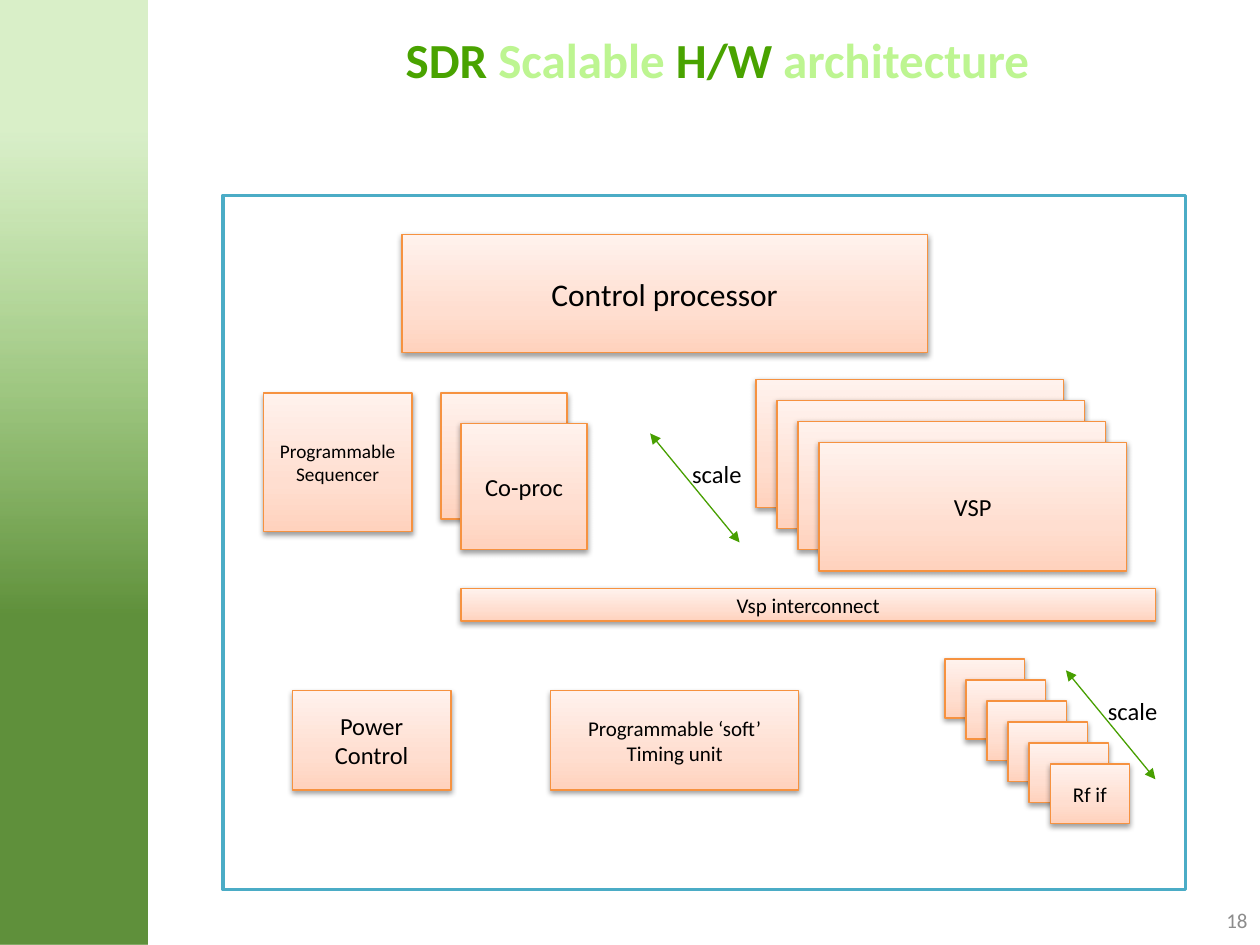
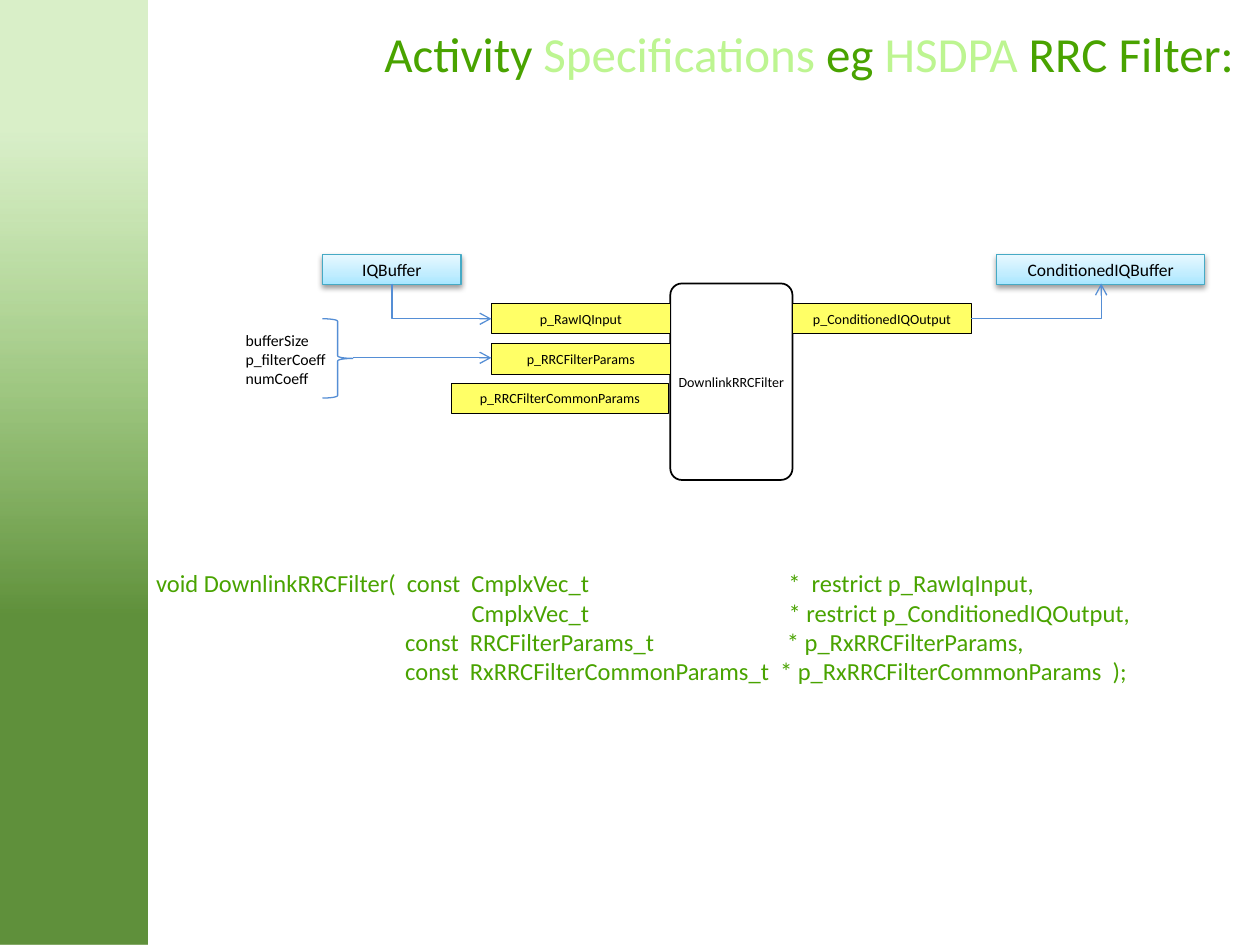
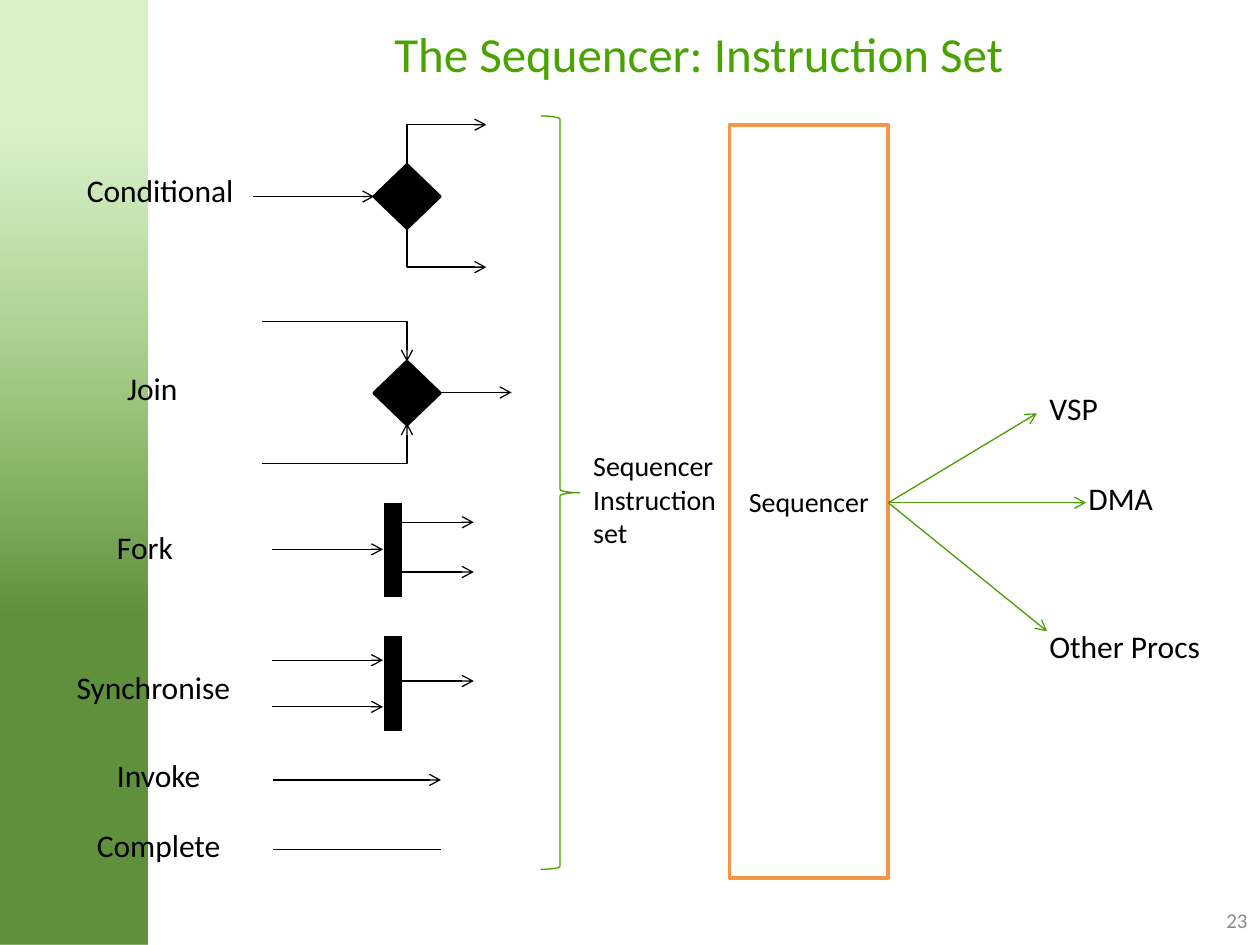
from dataclasses import dataclass

from lxml import etree
from pptx import Presentation
from pptx import util as u
from pptx.dml.color import RGBColor
from pptx.enum import shapes, text
from pptx.oxml import parse_xml
from pptx.oxml.ns import nsdecls, qn

SHAPE = shapes.MSO_SHAPE
ALIGN = text.PP_ALIGN
ANCHOR = text.MSO_ANCHOR


@dataclass(frozen=True)
class Look:
    """Fill, outline and shadow of a kind of box; a tuple fill is a gradient."""
    fill: object = None
    line: str = None
    weight: float = 0.75
    shadow: bool = False


class Theme:
    font = "Calibri"
    black, grey = "000000", "8C8C8C"
    green, pale, arrow = "49A300", "BDF591", "479F00"
    blue = "558ED5"
    title, label, mid, code, note, small, param, port = 28, 18, 16, 14, 12, 11, 9, 8
    # Gradient stops: position, colour, opacity in percent, from the bottom up
    band = Look(((35, "5C8E37", 97), (86, "82CA4E", 30)))
    unit = Look(((0, "FFD2BD", 100), (35, "FFDED0", 100), (100, "FFF2ED", 100)),
                "F69240", shadow=True)
    buffer = Look(((0, "A7E6FF", 100), (35, "C1EDFF", 100), (100, "E7F8FF", 100)),
                  "46AAC5", shadow=True)
    chip = Look("FFFFFF", "4BACC6", 2)
    sequencer = Look("FFFFFF", "F79646", 2)
    pin = Look("FFFF66", black, 0.5)
    activity = Look(None, black, 1)
    node = Look(black, black, 2)


def write(tf, content, size, color=Theme.black, align=ALIGN.LEFT,
          anchor=ANCHOR.TOP, wrap=True, inset=None, bold=None):
    """Fill a frame: lines of a string, or one line of (text, colour) runs."""
    tf.word_wrap, tf.vertical_anchor = wrap, anchor
    tf.auto_size = text.MSO_AUTO_SIZE.NONE
    if inset is not None:
        tf.margin_left = tf.margin_top = tf.margin_right = tf.margin_bottom = inset
    if isinstance(content, str):
        lines = [[(line, color)] for line in content.split("\n")]
    else:
        lines = [content]
    for i, line in enumerate(lines):
        p = tf.add_paragraph() if i else tf.paragraphs[0]
        p.alignment = align
        for words, rgb in line:
            r = p.add_run()
            r.text = words
            r.font.name, r.font.size, r.font.bold = Theme.font, u.Pt(size), bold
            r.font.color.rgb = RGBColor.from_string(rgb)


class Deck:
    """Holds the style and the current slide; the grid has 100 columns, 75 rows."""

    def __init__(self, theme):
        self.t = theme
        self.prs = Presentation()
        self.prs.slide_width, self.prs.slide_height = u.Inches(10), u.Inches(7.5)
        self.col = self.prs.slide_width / 100
        self.row = self.prs.slide_height / 75
        self.s = None

    def place(self, x, y, w, h):
        return [round(n * cell) for n, cell in
                zip((x, y, w, h), (self.col, self.row) * 2)]

    def slide(self, title, x, h=8.4, number=None, bold=None):
        first = self.s is None
        self.s = self.prs.slides.add_slide(self.prs.slide_layouts[5])
        if first:
            self.side_band()
        sp = self.s.shapes.title
        sp.left, sp.top, sp.width, sp.height = self.place(x, 0, 100 - x, h)
        write(sp.text_frame, title, self.t.title, self.t.green,
              anchor=ANCHOR.MIDDLE, bold=bold)
        if number:
            self.label(number, 94.1, 71, 5.9, 4, size=self.t.note, color=self.t.grey,
                       align=ALIGN.RIGHT, anchor=ANCHOR.MIDDLE, wrap=True)

    def side_band(self):
        """Draw the green band once and move it to the slide master."""
        sp = self.box("", 0, 0, 11.7, 75, self.t.band)
        self.prs.slide_master.shapes.element.insert(2, sp.element)

    def box(self, words, x, y, w, h, look, size=14, shape=SHAPE.RECTANGLE, inset=None):
        sp = self.s.shapes.add_shape(shape, *self.place(x, y, w, h))
        sp.shadow.inherit = False
        self.paint(sp, look)
        if words:
            write(sp.text_frame, words, size, align=ALIGN.CENTER,
                  anchor=ANCHOR.MIDDLE, inset=inset)
        return sp

    def paint(self, sp, look):
        spPr = sp.element.spPr
        if look.fill is None:
            sp.fill.background()
        else:
            sp.fill.solid()
            if isinstance(look.fill, str):
                sp.fill.fore_color.rgb = RGBColor.from_string(look.fill)
            else:
                stops = "".join(
                    f'<a:gs pos="{pos * 1000}"><a:srgbClr val="{rgb}">'
                    f'<a:alpha val="{alpha * 1000}"/></a:srgbClr></a:gs>'
                    for pos, rgb, alpha in look.fill)
                spPr.replace(spPr.find(qn("a:solidFill")), parse_xml(
                    f'<a:gradFill {nsdecls("a")} rotWithShape="1"><a:gsLst>{stops}'
                    '</a:gsLst><a:lin ang="16200000" scaled="0"/></a:gradFill>'))
        if look.line:
            sp.line.color.rgb = RGBColor.from_string(look.line)
            sp.line.width = u.Pt(look.weight)
        else:
            sp.line.fill.background()
        if look.shadow:
            spPr.find(qn("a:effectLst")).append(parse_xml(
                f'<a:outerShdw {nsdecls("a")} blurRad="40000" dist="20000" '
                'dir="5400000" rotWithShape="0"><a:srgbClr val="000000">'
                '<a:alpha val="38000"/></a:srgbClr></a:outerShdw>'))

    def stack(self, words, count, x, y, w, h, dx=1.67, dy=1.67, size=14):
        """Overlapping units; only the front one is named."""
        for i in range(count):
            front = i == count - 1
            self.box(words if front else "", x + i * dx, y + i * dy, w, h,
                     self.t.unit, size)

    def label(self, words, x, y, w, h, size=18, wrap=False, **style):
        sp = self.s.shapes.add_textbox(*self.place(x, y, w, h))
        write(sp.text_frame, words, size, wrap=wrap, **style)

    def brace(self, x, y, w, h, color):
        self.box("", x, y, w, h, Look(None, color), shape=SHAPE.RIGHT_BRACE)

    def line(self, x1, y1, x2, y2, color=Theme.black, weight=0.75, head=None, tail=None):
        c = self.s.shapes.add_connector(shapes.MSO_CONNECTOR.STRAIGHT,
                                        *self.place(x1, y1, x2, y2))
        c.line.color.rgb = RGBColor.from_string(color)
        c.line.width = u.Pt(weight)
        ln = c.line._get_or_add_ln()
        for tag, kind in (("a:headEnd", head), ("a:tailEnd", tail)):
            if kind:
                etree.SubElement(ln, qn(tag)).set("type", kind)
        etree.SubElement(c.element.spPr, qn("a:effectLst"))
        return c

    def arrow(self, x1, y1, x2, y2, color=Theme.black):
        return self.line(x1, y1, x2, y2, color, tail="arrow")

    def elbow(self, x1, y1, x2, y2, color=Theme.black, down_first=False):
        """Arrow with one corner; a vertical start is a turned connector."""
        turn = 0
        if down_first:
            turn = 270 if y2 > y1 else 90
            cx, cy = (x1 + x2) / 2, (y1 + y2) / 2
            half_w, half_h = abs(y2 - y1) / 2, (x2 - x1) / 2
            if y2 < y1:
                half_h = -half_h
            x1, y1, x2, y2 = cx + half_w, cy - half_h, cx - half_w, cy + half_h
        c = self.arrow(x1, y1, x2, y2, color)
        spPr = c.element.spPr
        spPr.find(qn("a:prstGeom")).set("prst", "bentConnector2")
        if turn:
            spPr.find(qn("a:xfrm")).set("rot", str(turn * 60000))

    def scale(self, x, y):
        """Double-headed diagonal arrow with its caption."""
        self.line(x, y, x + 7.1, y + 8.65, self.t.arrow, head="triangle", tail="triangle")
        self.label("scale", x + 2.35, y + 1.55, 6, 3.4, size=self.t.code)


def hardware_slide(d):
    t = d.t
    d.slide([("SDR ", t.green), ("Scalable ", t.pale), ("H/W ", t.green),
             ("architecture", t.pale)], 31.2, 9.3, number="18", bold=True)
    d.box("", 17.7, 15.5, 76.4, 55.1, t.chip)
    # Single units
    for words, x, y, w, h, size in (
            ("Control processor", 31.9, 18.6, 41.7, 9.4, t.label),
            ("Programmable ‘soft’\nTiming unit", 43.7, 54.8, 19.7, 7.9, t.note),
            ("Programmable\nSequencer", 20.9, 31.2, 11.8, 11, t.small),
            ("Power Control", 23.2, 54.8, 12.6, 7.9, t.code),
            ("Vsp interconnect", 36.6, 46.7, 55.1, 2.6, t.note)):
        d.box(words, x, y, w, h, t.unit, size)
    # Scalable units
    d.stack("Rf if", 6, 75, 52.3, 6.3, 4.7, size=t.note)
    d.stack("VSP", 4, 60, 30.1, 24.4, 10.2)
    d.stack("Co-proc", 2, 35, 31.2, 10, 10, dx=1.6, dy=2.4)
    d.scale(84.6, 53.2)
    d.scale(51.6, 34.4)


def activity_slide(d):
    t = d.t
    d.slide([("Activity ", t.green), ("Specifications ", t.pale), ("eg ", t.green),
             ("HSDPA", t.pale), (" RRC Filter:", t.green)], 29.5)
    # Filter and its ports
    sp = d.box("DownlinkRRCFilter", 53.2, 22.5, 9.7, 15.6, t.activity, t.port,
               SHAPE.ROUNDED_RECTANGLE, inset=0)
    sp.adjustments[0] = 0.095
    for words, x, y, w in (("p_RawIQInput", 39, 24.1, 14.2),
                           ("p_RRCFilterParams", 39, 27.3, 14.2),
                           ("p_RRCFilterCommonParams", 35.8, 30.4, 17.3),
                           ("p_ConditionedIQOutput", 62.9, 24.1, 14.2)):
        d.box(words, x, y, w, 2.4, t.pin, t.port, inset=0)
    # Parameters
    d.label("bufferSize\np_filterCoeff\nnumCoeff", 18.5, 25.8, 8.5, 5.6, size=t.param)
    d.brace(25.6, 25.3, 2.4, 6.3, t.blue)
    d.arrow(28, 28.4, 39, 28.4, t.blue)
    # Buffers
    for words, x, w in (("IQBuffer", 25.6, 11), ("ConditionedIQBuffer", 79.1, 16.5)):
        d.box(words, x, 20.2, w, 2.4, t.buffer, 10)
    d.elbow(31.1, 22.5, 39, 25.3, t.blue, down_first=True)
    d.elbow(77.1, 25.3, 87.4, 22.5, t.blue)
    # Prototype
    d.label("""\
void DownlinkRRCFilter(  const  CmplxVec_t                                    *  restrict p_RawIqInput,
                                                         CmplxVec_t                                    * restrict p_ConditionedIQOutput,
                                             const  RRCFilterParams_t                        * p_RxRRCFilterParams,
                                             const  RxRRCFilterCommonParams_t  * p_RxRRCFilterCommonParams  );""",
            11.4, 44.6, 88.6, 10.4, size=t.code, color=t.green, wrap=True)


def sequencer_slide(d):
    t = d.t
    d.slide("The Sequencer: Instruction Set", 30.3, number="23")
    # Instruction names
    for words, x, y, w in (("Conditional", 5.9, 13.1, 13.8), ("Join", 9.1, 28.8, 6.1),
                           ("Fork", 8.3, 41.4, 6.5), ("Synchronise", 5.1, 52.5, 14.3),
                           ("Invoke", 8.3, 59.5, 8.7), ("Complete", 6.7, 65.1, 12)):
        d.label(words, x, y, w, 4, size=t.label)
    # Conditional and join
    for y in (13.1, 28.7):
        d.box("", 29.7, y, 5.2, 5, t.node, shape=SHAPE.DIAMOND)
    d.arrow(20.1, 15.6, 29.7, 15.6)
    d.arrow(34.9, 31.15, 40.6, 31.15)
    for start, end in ((18, 21.2), (13.1, 9.9)):
        d.elbow(32.3, start, 38.6, end, down_first=True)
    for start, end in ((25.5, 28.7), (36.8, 33.6)):
        d.elbow(20.8, start, 32.3, end)
    # Fork and synchronise
    for y in (39.9, 50.5):
        d.line(31.2, y, 31.2, y + 7.5, weight=10.25)
    for y in (43.6, 52.4, 56.1):
        d.arrow(21.6, y, 30.4, y)
    for y in (41.45, 45.4, 54.05):
        d.arrow(31.9, y, 37.6, y)
    # Invoke and complete
    d.arrow(21.7, 61.9, 35, 61.9)
    d.line(21.7, 67.4, 35, 67.4)
    # Sequencer and its targets
    d.brace(42.9, 9.2, 3.1, 59.8, t.arrow)
    d.label("Sequencer\nInstruction\nset", 46.1, 35.1, 11.9, 9.1, size=t.mid)
    d.box("Sequencer", 57.9, 9.9, 12.6, 59.8, t.sequencer, t.mid)
    for words, x, y, w, tip_x, tip_y in (("VSP", 82.3, 30.4, 5.9, 82.3, 32.8),
                                         ("DMA", 85.4, 37.5, 7.2, 86.2, 39.9),
                                         ("Other Procs", 82.3, 49.3, 14.1, 83.1, 50.1)):
        d.arrow(70.5, 39.9, tip_x, tip_y, t.arrow)
        d.label(words, x, y, w, 4, size=t.label)


def main():
    d = Deck(Theme)
    hardware_slide(d)
    activity_slide(d)
    sequencer_slide(d)
    d.prs.save("out.pptx")


if __name__ == "__main__":
    main()
